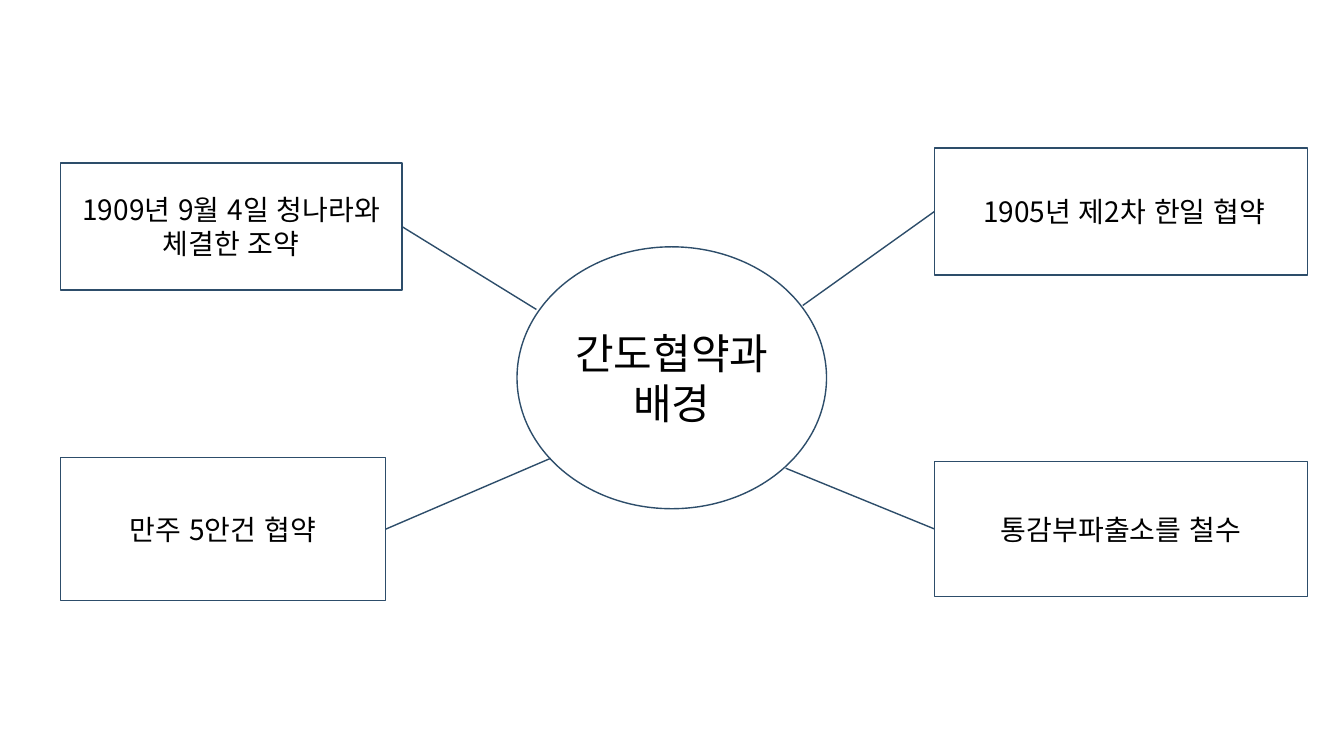
"""Builds a mind map slide: a central topic with four line callouts."""
from dataclasses import dataclass

from lxml import etree
from pptx import Presentation
from pptx.dml import color
from pptx.enum import lang, shapes, text
from pptx.oxml import ns
from pptx.util import Cm, Pt

TOPIC = ("간도협약과 배경", (13.03, 6.22, 7.8, 6.6))
CALLOUTS = [
    {"text": " 1905년 제2차 한일 협약", "box": (23.55, 3.73, 9.4, 3.2), "tip": (20.23, 7.7)},
    {"text": "1909년 9월 4일 청나라와 체결한 조약", "box": (1.52, 4.11, 8.61, 3.2), "tip": (13.52, 7.8)},
    {"text": "만주 5안건 협약", "box": (1.52, 11.53, 8.2, 3.61), "tip": (13.88, 11.55)},
    {"text": "통감부파출소를 철수", "box": (23.55, 11.63, 9.4, 3.4), "tip": (19.8, 11.8)},
]


@dataclass(frozen=True)
class Theme:
    font: str = "Noto Sans CJK KR"
    ink: str = "000000"
    outline: str = "2D4D6A"
    line: float = 1
    topic_size: int = 30
    callout_size: int = 20


THEME = Theme()


def add_node(slide, kind, box, words, size):
    sp = slide.shapes.add_shape(kind, *map(Cm, box))
    sp.shadow.inherit = False
    sp.fill.background()
    sp.line.color.rgb = color.RGBColor.from_string(THEME.outline)
    sp.line.width = Pt(THEME.line)
    tf = sp.text_frame
    frame = {"word_wrap": True, "vertical_anchor": text.MSO_ANCHOR.MIDDLE}
    for name, value in frame.items():
        setattr(tf, name, value)
    p = tf.paragraphs[0]
    p.alignment = text.PP_ALIGN.CENTER
    r = p.add_run()
    r.text = words
    style = {"name": THEME.font, "size": Pt(size), "language_id": lang.MSO_LANGUAGE_ID.KOREAN}
    for name, value in style.items():
        setattr(r.font, name, value)
    r.font.color.rgb = color.RGBColor.from_string(THEME.ink)
    latin = r.font._element.find(ns.qn("a:latin"))
    ea = etree.Element(ns.qn("a:ea"), typeface=THEME.font)
    latin.addnext(ea)
    return sp


def point_callout(sp, box, tip):
    left, top, width, height = box
    x, y = (tip[0] - left) / width, (tip[1] - top) / height
    start_x = 1 if x > 0.5 else 0
    for i, value in enumerate((0.5, start_x, y, x)):
        sp.adjustments[i] = value


def main():
    prs = Presentation()
    prs.slide_width, prs.slide_height = Cm(33.87), Cm(19.05)
    s = prs.slides.add_slide(prs.slide_layouts[6])
    words, box = TOPIC
    add_node(s, shapes.MSO_SHAPE.OVAL, box, words, THEME.topic_size)
    for item in CALLOUTS:
        sp = add_node(s, shapes.MSO_SHAPE.LINE_CALLOUT_1, item["box"], item["text"], THEME.callout_size)
        point_callout(sp, item["box"], item["tip"])
    prs.save("out.pptx")


if __name__ == "__main__":
    main()
